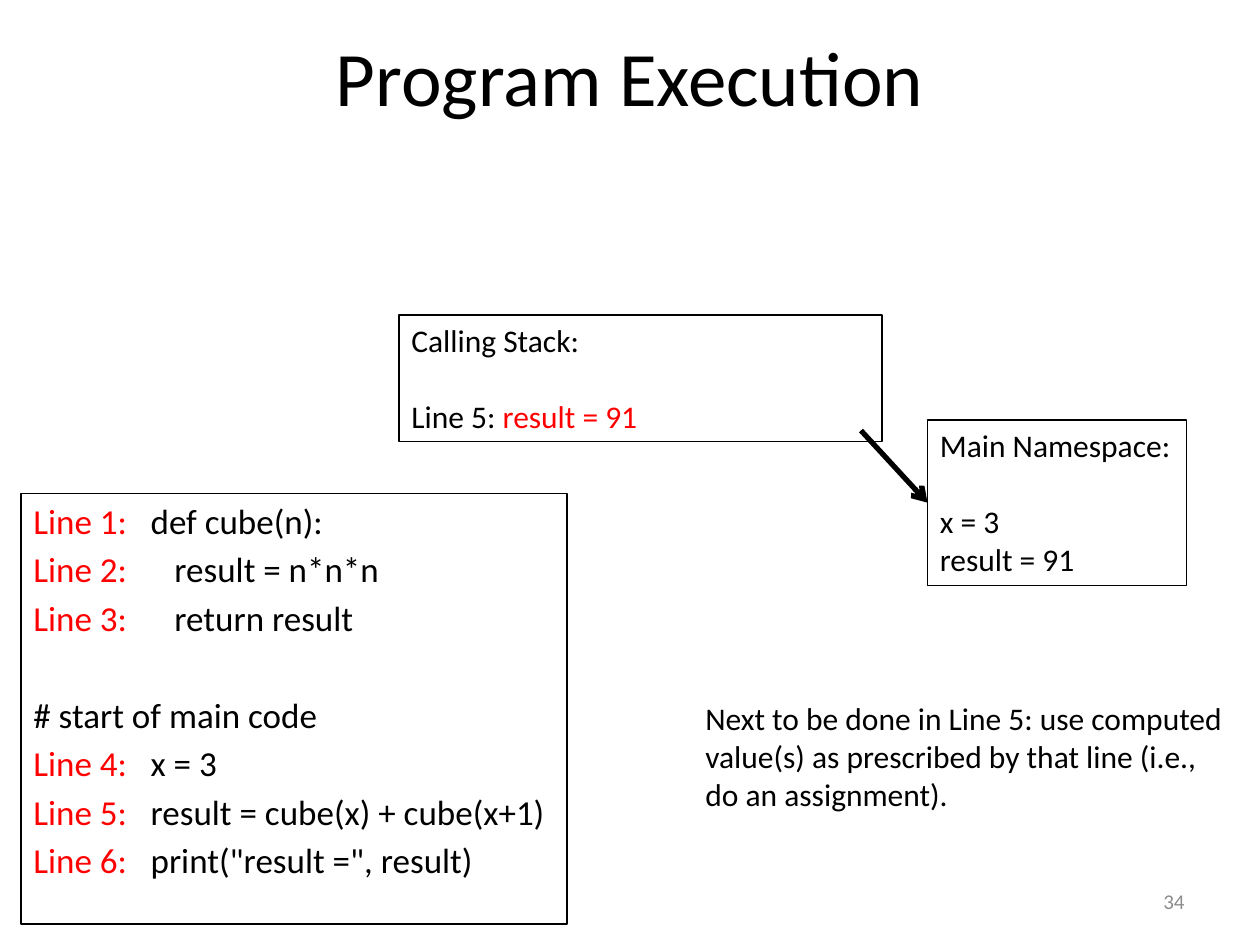
from lxml import etree
from pptx import Presentation
from pptx import util as u
from pptx.dml.color import RGBColor
from pptx.enum import shapes, text
from pptx.oxml.ns import qn

BLACK, RED, GREY = "000000", "FF0000", "8C8C8C"
LEFT, CENTER, RIGHT = text.PP_ALIGN.LEFT, text.PP_ALIGN.CENTER, text.PP_ALIGN.RIGHT
TOP, MIDDLE = text.MSO_ANCHOR.TOP, text.MSO_ANCHOR.MIDDLE


def color(value):
    return RGBColor.from_string(value)


def add_box(bounds, paragraphs, size, border=False, align=LEFT, anchor=TOP):
    bounds = [u.Pt(length) for length in bounds]
    if border:
        box = page.shapes.add_shape(shapes.MSO_SHAPE.RECTANGLE, *bounds)
        box.shadow.inherit = False
        box.fill.background()
        box.line.color.rgb = color(BLACK)
        box.line.width = u.Pt(0.75)
    else:
        box = page.shapes.add_textbox(*bounds)
    frame = box.text_frame
    for name, value in {"word_wrap": True, "vertical_anchor": anchor}.items():
        setattr(frame, name, value)
    for index, (before, spans) in enumerate(paragraphs):
        para = frame.add_paragraph() if index else frame.paragraphs[0]
        para.alignment = align
        para.space_before = u.Pt(before)
        for words, hue in spans:
            span = para.add_run()
            span.text = words
            for name, value in {"name": "Calibri", "size": u.Pt(size)}.items():
                setattr(span.font, name, value)
            span.font.color.rgb = color(hue)
    return box


deck = Presentation()
deck.slide_width, deck.slide_height = u.Pt(720), u.Pt(540)
page = deck.slides.add_slide(deck.slide_layouts[6])

add_box((36, 12, 648, 63), [(0, [("Program Execution", BLACK)])], 44,
        align=CENTER, anchor=MIDDLE)

code_lines = [
    ("Line 1:", "def cube(n):", 67),
    ("Line 2:", "result = n*n*n", 80.6),
    ("Line 3:", "return result", 80.6),
    ("", "# start of main code", 0),
    ("Line 4:", "x = 3", 67),
    ("Line 5:", "result = cube(x) + cube(x+1)", 67),
    ("Line 6:", 'print("result =", result)', 67),
]
code_paragraphs = []
for index, (label, code, tab) in enumerate(code_lines):
    before = 3.6 if label else 31.6
    spans = [(label + "\t", RED), (code, BLACK)] if label else [(code, BLACK)]
    code_paragraphs.append((before if index else 0, spans))
code_box = add_box((12, 282, 312, 246), code_paragraphs, 20, border=True)
for para, (label, code, tab) in zip(code_box.text_frame.paragraphs, code_lines):
    if tab:
        stops = etree.SubElement(para._p.get_or_add_pPr(), qn("a:tabLst"))
        etree.SubElement(stops, qn("a:tab"), pos=str(int(u.Pt(tab))), algn="l")

add_box((516, 500.5, 168, 28.5), [(0, [("34", GREY)])], 12,
        align=RIGHT, anchor=MIDDLE)

namespace_box = add_box((530, 240, 148, 94.5), [
    (0, [("Main Namespace:", BLACK)]),
    (22, [("x = 3", BLACK)]),
    (0, [("result = 91", BLACK)]),
], 18, border=True)

add_box((228, 180, 276, 72.5), [
    (0, [("Calling Stack:", BLACK)]),
    (22, [("Line 5: ", BLACK), ("result = 91", RED)]),
], 18, border=True)

arrow = page.shapes.add_connector(
    shapes.MSO_CONNECTOR.STRAIGHT, u.Pt(492), u.Pt(246), u.Pt(530), u.Pt(287.25))
arrow.end_connect(namespace_box, 1)
arrow.line.color.rgb = color(BLACK)
arrow.line.width = u.Pt(3)
etree.SubElement(arrow.line._get_or_add_ln(), qn("a:tailEnd"), type="arrow")
etree.SubElement(arrow._element.spPr, qn("a:effectLst"))

note = ("Next to be done in Line 5: use computed\v"
        "value(s) as prescribed by that line (i.e.,\v"
        "do an assignment).")
note_box = add_box((396, 396, 314, 72.5), [(0, [("", BLACK)])], 18)
note_para = note_box.text_frame.paragraphs[0]
note_para.text = note
for span in note_para.runs:
    for name, value in {"name": "Calibri", "size": u.Pt(18)}.items():
        setattr(span.font, name, value)
    span.font.color.rgb = color(BLACK)

deck.save("out.pptx")
